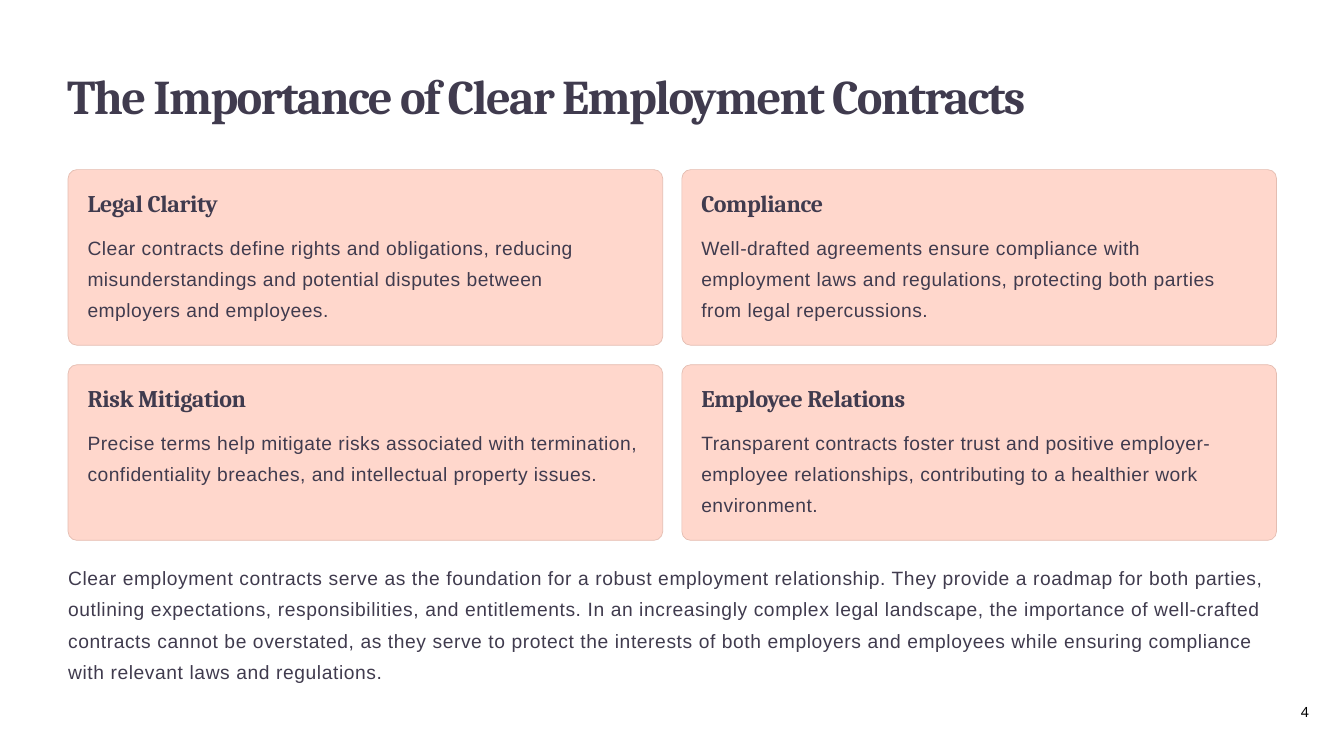
from pptx import Presentation
from pptx import util as u
from pptx.dml import color
from pptx.enum import shapes, text
from pptx.oxml import ns

COLORS = {"ink": "403B4E", "card": "FFD7CC", "edge": "E4BDB1", "number": "000000"}
CARDS = [
    ("Legal Clarity",
     "Clear contracts define rights and obligations, reducing misunderstandings "
     "and potential disputes between employers and employees.", 1.4),
    ("Compliance",
     "Well-drafted agreements ensure compliance with employment laws and "
     "regulations, protecting both parties from legal repercussions.", 1.4),
    ("Risk Mitigation",
     "Precise terms help mitigate risks associated with termination, "
     "confidentiality breaches, and intellectual property issues.", 0.5),
    ("Employee Relations",
     "Transparent contracts foster trust and positive employer-employee "
     "relationships, contributing to a healthier work environment.", 1.4),
]
SUMMARY = (
    "Clear employment contracts serve as the foundation for a robust employment "
    "relationship. They provide a roadmap for both parties, outlining expectations, "
    "responsibilities, and entitlements. In an increasingly complex legal landscape, "
    "the importance of well-crafted contracts cannot be overstated, as they serve to "
    "protect the interests of both employers and employees while ensuring compliance "
    "with relevant laws and regulations."
)


def rgb(name):
    return color.RGBColor.from_string(COLORS[name])


def set_frame(tf, left=0, top=0.03, right=0):
    tf.word_wrap = True
    tf.auto_size = text.MSO_AUTO_SIZE.NONE
    tf.vertical_anchor = text.MSO_ANCHOR.TOP
    tf.margin_left, tf.margin_top = u.Cm(left), u.Cm(top)
    tf.margin_right, tf.margin_bottom = u.Cm(right), 0


def write(p, words, font, size, tracking, bold=False, ink="ink", before=1, lines=1):
    p.text = words
    p.alignment = text.PP_ALIGN.LEFT
    p.space_before = u.Pt(before)
    p.line_spacing = lines
    p.font.name, p.font.size, p.font.bold = font, u.Pt(size), bold
    p.font.color.rgb = rgb(ink)
    props = p._p.get_or_add_pPr().find(ns.qn("a:defRPr"))
    props.set("spc", str(round(tracking * 100)))


def add_title(s, words):
    sp = s.shapes.title
    sp.left, sp.top, sp.width, sp.height = u.Cm(2.03), u.Cm(1.98), u.Cm(36.6), u.Cm(1.83)
    set_frame(sp.text_frame)
    write(sp.text_frame.paragraphs[0], words, "Cambria", 41.5, -1.44, bold=True)


def add_card(s, left, top, heading, body, right):
    sp = s.shapes.add_shape(shapes.MSO_SHAPE.ROUNDED_RECTANGLE,
                            u.Cm(left), u.Cm(top), u.Cm(17.98), u.Cm(5.31))
    sp.adjustments[0] = 0.05
    sp.shadow.inherit = False
    sp.fill.solid()
    sp.fill.fore_color.rgb = rgb("card")
    sp.line.color.rgb = rgb("edge")
    sp.line.width = u.Pt(0.6)
    tf = sp.text_frame
    set_frame(tf, 0.51, 0.49, right)
    write(tf.paragraphs[0], heading, "Cambria", 20.5, -0.35, bold=True)
    write(tf.add_paragraph(), body, "Arial", 16.5, 0.45, before=8.9, lines=1.36)


def add_text(s, left, top, width, height, words, font, size, tracking, **style):
    sp = s.shapes.add_textbox(u.Cm(left), u.Cm(top), u.Cm(width), u.Cm(height))
    set_frame(sp.text_frame)
    write(sp.text_frame.paragraphs[0], words, font, size, tracking, **style)


def main():
    """Build the slide on clear employment contracts."""
    prs = Presentation()
    prs.slide_width, prs.slide_height = u.Cm(40.64), u.Cm(22.86)
    s = prs.slides.add_slide(prs.slide_layouts[5])
    add_title(s, "The Importance of Clear Employment Contracts")
    for i, card in enumerate(CARDS):
        row, col = divmod(i, 2)
        add_card(s, 2.06 + 18.56 * col, 5.13 + 5.9 * row, *card)
    add_text(s, 2.06, 16.84, 36.2, 3.89, SUMMARY, "Arial", 16.5, 0.55, lines=1.36)
    add_text(s, 39.34, 21.23, 0.7, 0.64, "4", "Noto Sans", 12, -0.5,
             ink="number", before=1.8)
    prs.save("out.pptx")


if __name__ == "__main__":
    main()
